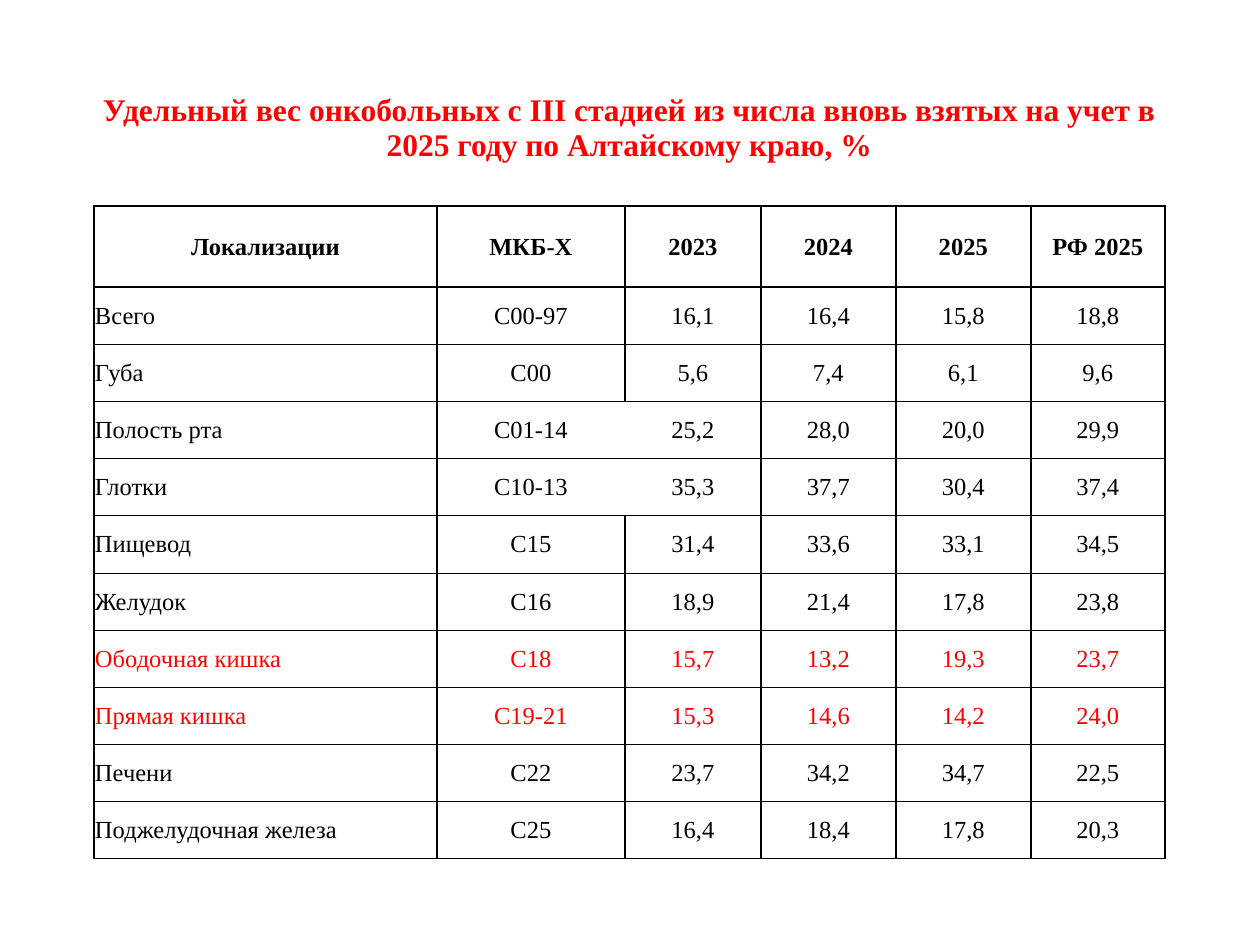
from dataclasses import dataclass

from lxml import etree
from pptx import Presentation
from pptx import util as u
from pptx.dml import color
from pptx.enum import text
from pptx.oxml import ns

SCALE = 914400 / 126


@dataclass(frozen=True)
class Theme:
    font: str = "Times New Roman"
    black: str = "000000"
    red: str = "FF0000"
    title: int = 18
    body: int = 14
    tiny: int = 8
    thin: float = 0.5
    thick: float = 1


THEME = Theme()
PLAIN = "{2D5ABB26-0587-4C30-8999-92F81FD0307C}"
COLS = [128, 128, 87, 188, 136, 135, 135, 134]
ROWS = [84, 36, 81] + [57, 57, 57, 57, 58] * 2
TITLE = ("Удельный вес онкобольных с III стадией из числа вновь взятых "
         "на учет в 2025 году по Алтайскому краю, %")
HEAD = ["Локализации", "МКБ-X", "2023", "2024", "2025", "РФ 2025"]
DATA = [
    ["Всего", "С00-97", "16,1", "16,4", "15,8", "18,8"],
    ["Губа", "С00", "5,6", "7,4", "6,1", "9,6"],
    ["Полость рта", "С01-14", "25,2", "28,0", "20,0", "29,9"],
    ["Глотки", "С10-13", "35,3", "37,7", "30,4", "37,4"],
    ["Пищевод", "С15", "31,4", "33,6", "33,1", "34,5"],
    ["Желудок", "С16", "18,9", "21,4", "17,8", "23,8"],
    ["Ободочная кишка", "С18", "15,7", "13,2", "19,3", "23,7"],
    ["Прямая кишка", "С19-21", "15,3", "14,6", "14,2", "24,0"],
    ["Печени", "С22", "23,7", "34,2", "34,7", "22,5"],
    ["Поджелудочная железа", "С25", "16,4", "18,4", "17,8", "20,3"],
]
ALERT = {"Ободочная кишка", "Прямая кишка"}
OPEN = {"Полость рта", "Глотки"}


def px(n):
    return u.Emu(round(n * SCALE))


def write(cell, words, size=THEME.body, tone=THEME.black, bold=False,
          align=text.PP_ALIGN.CENTER):
    para = cell.text_frame.paragraphs[0]
    para.alignment = align
    run = para.add_run()
    run.text = words
    font = run.font
    font.name, font.size, font.bold = THEME.font, u.Pt(size), bold
    font.color.rgb = color.RGBColor.from_string(tone)


def edge(cell, **sides):
    props = cell._tc.get_or_add_tcPr()
    for side in "LRTB":
        width = sides.get(side, 0)
        line = etree.SubElement(props, ns.qn(f"a:ln{side}"), w=str(u.Pt(width)))
        if width:
            fill = etree.SubElement(line, ns.qn("a:solidFill"))
            etree.SubElement(fill, ns.qn("a:srgbClr"), val=THEME.black)
        else:
            etree.SubElement(line, ns.qn("a:noFill"))


def reset(cell):
    cell.margin_left = cell.margin_right = cell.margin_top = px(1)
    cell.margin_bottom = 0
    cell.vertical_anchor = text.MSO_ANCHOR.MIDDLE
    cell.fill.background()
    para = cell.text_frame.paragraphs[0]._p
    if not cell.text_frame.text:
        etree.SubElement(para, ns.qn("a:endParaRPr"), sz=str(THEME.tiny * 100))


def sides(row, col):
    thin, thick = THEME.thin, THEME.thick
    if row == 0:
        return {}
    if row == 1:
        return {"B": thick}
    rule = {"L": thick, "R": thick,
            "T": thick if row <= 3 else thin,
            "B": thick if row == 2 else thin}
    if row > 2 and DATA[row - 3][0] in OPEN:
        if col == 3:
            rule["R"] = 0
        if col == 4:
            rule["L"] = 0
    return rule


def fill_row(grid, row, words, **style):
    grid.cell(row, 0).merge(grid.cell(row, 2))
    for col, word in zip([0, 3, 4, 5, 6, 7], words):
        left = col == 0 and row > 2
        align = text.PP_ALIGN.LEFT if left else text.PP_ALIGN.CENTER
        write(grid.cell(row, col), word, align=align, **style)


def make_grid(slide):
    frame = slide.shapes.add_table(len(ROWS), len(COLS), px(94), px(86),
                                   px(sum(COLS)), px(sum(ROWS)))
    grid = frame.table
    grid.first_row = grid.horz_banding = False
    grid._tbl.tblPr.find(ns.qn("a:tableStyleId")).text = PLAIN
    for col, width in zip(grid.columns, COLS):
        col.width = px(width)
    for row, height in zip(grid.rows, ROWS):
        row.height = px(height)
    return grid


def main():
    deck = Presentation()
    deck.slide_width, deck.slide_height = px(1260), px(945)
    slide = deck.slides.add_slide(deck.slide_layouts[6])
    grid = make_grid(slide)
    grid.cell(0, 0).merge(grid.cell(0, 7))
    write(grid.cell(0, 0), TITLE, size=THEME.title, tone=THEME.red, bold=True)
    fill_row(grid, 2, HEAD, bold=True)
    for row, words in enumerate(DATA, 3):
        tone = THEME.red if words[0] in ALERT else THEME.black
        fill_row(grid, row, words, tone=tone)
    for row in range(len(ROWS)):
        for col in range(len(COLS)):
            cell = grid.cell(row, col)
            edge(cell, **sides(row, col))
            reset(cell)
    deck.save("out.pptx")


if __name__ == "__main__":
    main()
